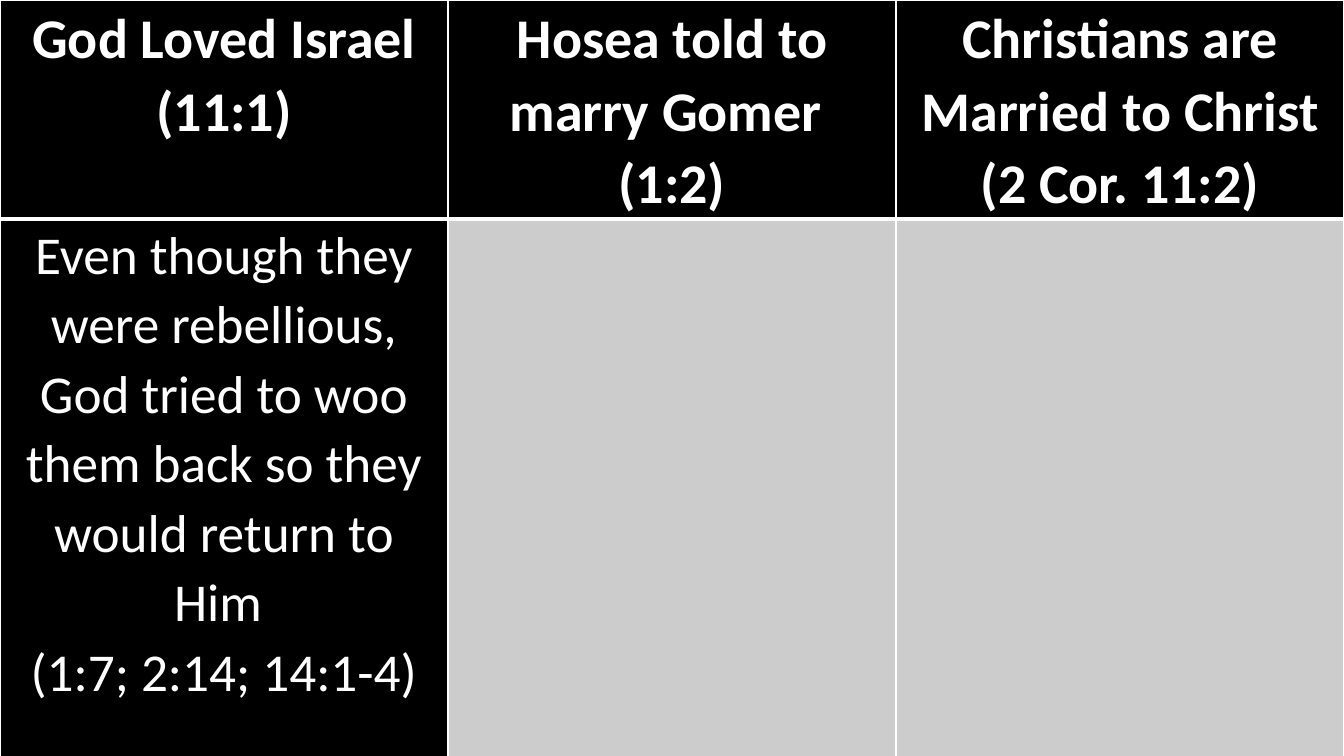
from dataclasses import dataclass

from lxml import etree
from pptx import Presentation
from pptx import util as u
from pptx.dml.color import RGBColor
from pptx.enum import text
from pptx.oxml import ns


@dataclass(frozen=True)
class Theme:
    """Colours, type sizes and line widths of the slide."""
    dark: str = "000000"
    light: str = "FFFFFF"
    grey: str = "CCCCCC"
    face: str = "Calibri"
    head: int = 40
    body: int = 38
    thin: int = 1
    thick: int = 3


class Deck:
    """Holds the style and the current slide."""

    def __init__(self, theme, wide, high):
        """Open a blank slide on a dark ground."""
        self.theme = theme
        self.file = Presentation()
        self.file.slide_width, self.file.slide_height = u.Inches(wide), u.Inches(high)
        self.slide = self.file.slides.add_slide(self.file.slide_layouts[6])
        self.paint(self.slide.background.fill, theme.dark)

    def paint(self, fill, tone):
        """Give a fill one solid colour."""
        fill.solid()
        fill.fore_color.rgb = RGBColor.from_string(tone)

    def edge(self, cell, side, width):
        """Draw one border of a cell."""
        line = etree.SubElement(cell._tc.get_or_add_tcPr(), ns.qn(f"a:ln{side}"),
                                w=str(u.Pt(width)))
        fill = etree.SubElement(line, ns.qn("a:solidFill"))
        etree.SubElement(fill, ns.qn("a:srgbClr"), val=self.theme.light)

    def label(self, cell, lines, size, bold):
        """Fill a cell with centred paragraphs."""
        form = {"name": self.theme.face, "size": u.Pt(size), "bold": bold}
        cell.text = "\n".join(lines)
        for para in cell.text_frame.paragraphs:
            para.alignment = text.PP_ALIGN.CENTER
            para.line_spacing = 1.07
            for run in para.runs:
                for key, value in form.items():
                    setattr(run.font, key, value)
                run.font.color.rgb = RGBColor.from_string(self.theme.light)

    def table(self, rows, shares):
        """Lay a table over the slide, with row heights as shares of it."""
        wide, high = self.file.slide_width, self.file.slide_height
        grid = self.slide.shapes.add_table(len(rows), len(rows[0]), 0, 0, wide, high).table
        form = {"margin_left": u.Inches(0.07), "margin_right": u.Inches(0.07),
                "margin_top": 0, "margin_bottom": 0}
        grid.horz_banding = False
        for at, (row, share) in enumerate(zip(rows, shares)):
            top = at == 0
            size = self.theme.head if top else self.theme.body
            rule = {"L": self.theme.thin, "R": self.theme.thin,
                    "T": self.theme.thin if top else self.theme.thick,
                    "B": self.theme.thick if top else self.theme.thin}
            grid.rows[at].height = int(high * share)
            for col, lines in enumerate(row):
                cell = grid.cell(at, col)
                for key, value in form.items():
                    setattr(cell, key, value)
                for side, width in rule.items():
                    self.edge(cell, side, width)
                self.paint(cell.fill, self.theme.dark if lines else self.theme.grey)
                if lines:
                    self.label(cell, lines, size, top)


def main():
    """Build the slide and save it."""
    deck = Deck(Theme(), 13.33, 7.5)
    deck.table([
        [["God Loved Israel (11:1)"],
         ["Hosea told to marry Gomer ", "(1:2)"],
         ["Christians are Married to Christ (2 Cor. 11:2)"]],
        [["Even though they were rebellious, God tried to woo them back "
          "so they would return to Him ", "(1:7; 2:14; 14:1-4)"], [], []],
    ], (0.28, 0.72))
    deck.file.save("out.pptx")


if __name__ == "__main__":
    main()
